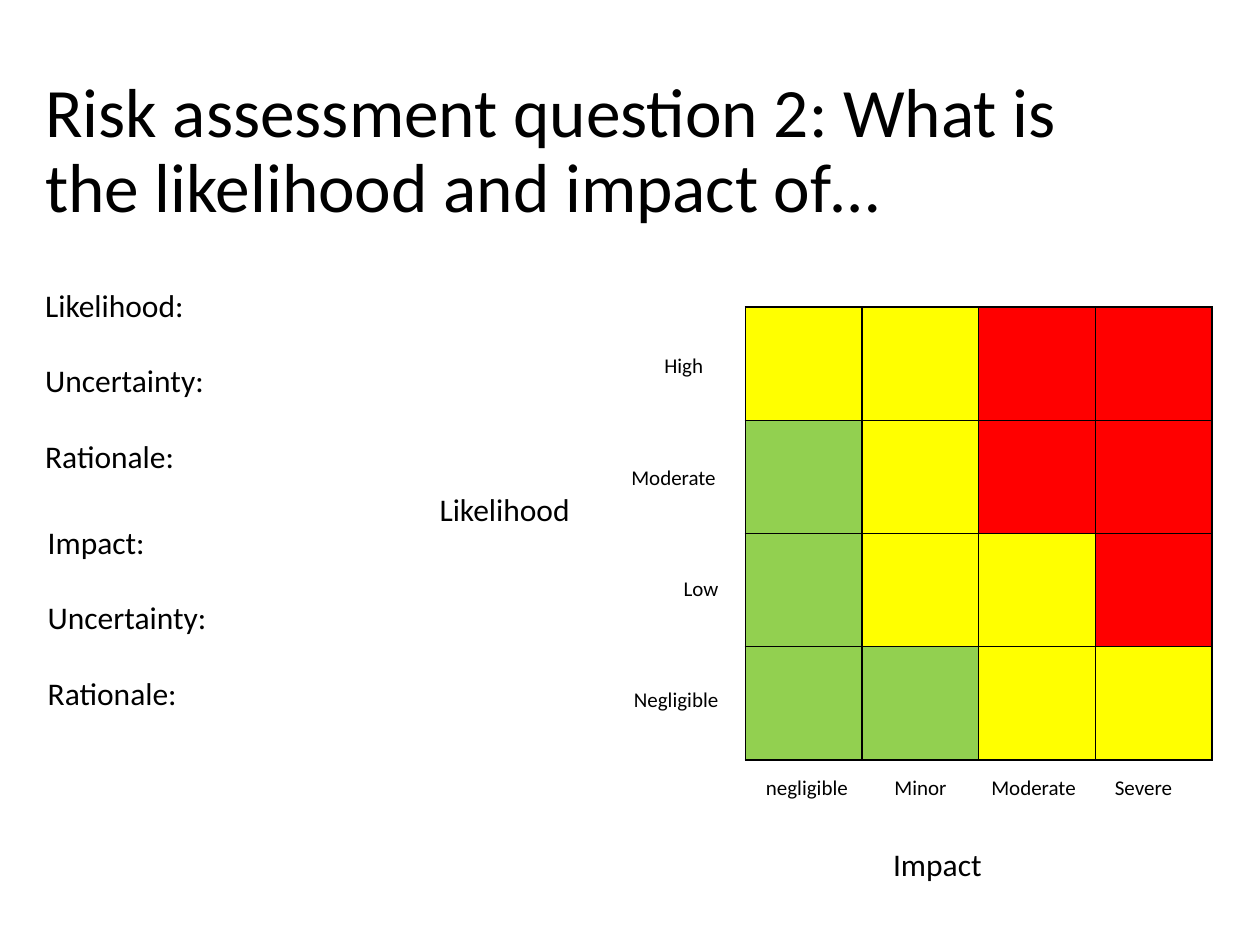
"""Build a risk assessment slide with a likelihood and impact matrix."""
from lxml import etree
from pptx import Presentation
from pptx.dml.color import RGBColor
from pptx.enum.text import MSO_ANCHOR, MSO_AUTO_SIZE, PP_ALIGN
from pptx.oxml.ns import qn
from pptx.util import Pt

LEFT, RIGHT = PP_ALIGN.LEFT, PP_ALIGN.RIGHT
TOP, MIDDLE, BOTTOM = MSO_ANCHOR.TOP, MSO_ANCHOR.MIDDLE, MSO_ANCHOR.BOTTOM
NO_FIT = MSO_AUTO_SIZE.NONE
BLACK = RGBColor(0x00, 0x00, 0x00)
RED = RGBColor(0xFF, 0x00, 0x00)
YELLOW = RGBColor(0xFF, 0xFF, 0x00)
GREEN = RGBColor(0x92, 0xD0, 0x50)
RISK_COLORS = {"R": RED, "Y": YELLOW, "G": GREEN}
TITLE_ONLY = 5


def set_all(target, values):
    for name, value in values.items():
        setattr(target, name, value)


class RiskPage:
    """Holds the text style and the slide being filled."""

    def __init__(self, deck, font="Calibri"):
        self.page = deck.slides.add_slide(deck.slide_layouts[TITLE_ONLY])
        self.font = font

    def format_text(self, frame, lines, size, paragraph_format):
        frame.text = "\n".join(lines)
        for para in frame.paragraphs:
            set_all(para, paragraph_format)
            for span in para.runs:
                set_all(span.font, {"name": self.font, "size": Pt(size)})
                span.font.color.rgb = BLACK

    def title(self, text, left, top, width, height, size):
        box = self.page.shapes.title
        set_all(box, {"left": Pt(left), "top": Pt(top),
                      "width": Pt(width), "height": Pt(height)})
        set_all(box.text_frame, {"auto_size": NO_FIT, "word_wrap": True,
                                 "vertical_anchor": BOTTOM,
                                 "margin_bottom": Pt(38)})
        self.format_text(box.text_frame, [text], size,
                         {"alignment": LEFT, "line_spacing": 0.9})

    def text(self, lines, left, top, width, height, size,
             anchor=MIDDLE, align=LEFT, gap=0):
        box = self.page.shapes.add_textbox(
            Pt(left), Pt(top), Pt(width), Pt(height))
        frame = box.text_frame
        set_all(frame, {"word_wrap": True, "vertical_anchor": anchor})
        self.format_text(frame, lines, size, {"alignment": align})
        for para in frame.paragraphs[1:]:
            para.space_before = Pt(gap)

    def border(self, cell):
        properties = cell._tc.get_or_add_tcPr()
        for side in ("a:lnL", "a:lnR", "a:lnT", "a:lnB"):
            line = etree.SubElement(properties, qn(side), w=str(Pt(1)))
            fill = etree.SubElement(line, qn("a:solidFill"))
            etree.SubElement(fill, qn("a:srgbClr"), val=str(BLACK))

    def matrix(self, pattern, left, top, cell_width, cell_height):
        rows, columns = len(pattern), len(pattern[0])
        table = self.page.shapes.add_table(
            rows, columns, Pt(left), Pt(top),
            Pt(cell_width * columns), Pt(cell_height * rows)).table
        set_all(table, {"first_row": False, "horz_banding": False})
        for row, levels in enumerate(pattern):
            for column, level in enumerate(levels):
                cell = table.cell(row, column)
                self.border(cell)
                cell.fill.solid()
                cell.fill.fore_color.rgb = RISK_COLORS[level]


def main():
    deck = Presentation()
    set_all(deck, {"slide_width": Pt(720), "slide_height": Pt(540)})
    page = RiskPage(deck)
    page.title("Risk assessment question 2: What is the likelihood and impact of…",
               18.7, 63.4, 620.6, 104.4, 39.6)
    page.matrix(["YYRR", "GYRR", "GYYR", "GGYY"], 426, 175.5, 66.65, 64.7)

    for label, left, width in (("negligible", 430.6, 62.6), ("Minor", 504, 79),
                               ("Moderate", 559.4, 70.6), ("Severe", 630, 62.6)):
        page.text([label], left, 439.2, width, 21.6, 12, TOP)
    for row, (label, left) in enumerate((("High", 306.7), ("Moderate", 313.9),
                                         ("Low", 315.4), ("Negligible", 315.4))):
        page.text([label], left, 198.2 + 63.5 * row, 102.2, 21.6, 12, TOP, RIGHT)

    page.text(["Impact"], 503.3, 457.9, 149, 72, 18)
    page.text(["Likelihood"], 244.1, 254.9, 142.6, 72, 18)
    for heading, left, top in (("Likelihood:", 18.7, 181.4),
                               ("Impact:", 20.2, 316.8)):
        page.text([heading, "Uncertainty:", "Rationale:"],
                  left, top, 149, 72, 18, gap=21.5)
    deck.save("out.pptx")


if __name__ == "__main__":
    main()
